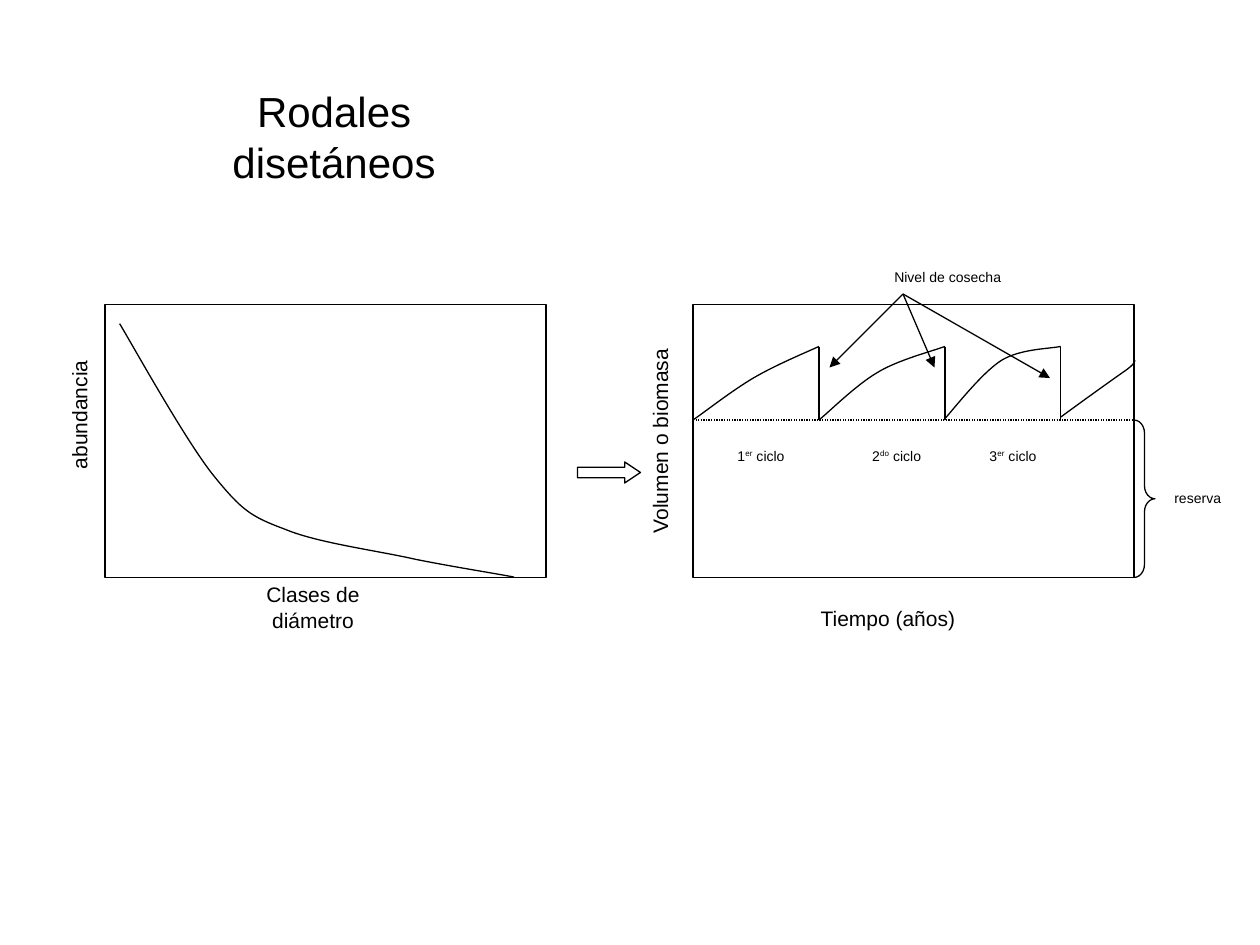
from dataclasses import dataclass

from lxml.etree import SubElement
from pptx import Presentation
from pptx.dml.color import RGBColor
from pptx.enum.dml import MSO_LINE
from pptx.enum.shapes import MSO_CONNECTOR, MSO_SHAPE as Shape
from pptx.enum.text import MSO_ANCHOR, MSO_AUTO_SIZE, PP_ALIGN
from pptx.oxml.ns import qn
from pptx.util import Pt

BLACK = RGBColor(0, 0, 0)
WHITE = RGBColor(255, 255, 255)
FONT = "Arial"
LINE_WIDTH = 0.75

# Shared levels of the two diagrams, in points
FRAME_TOP, FRAME_WIDTH, FRAME_HEIGHT = 174, 252, 156
LEFT_FRAME, RIGHT_FRAME = 60, 396
HARVEST, RESERVE = 198, 240

Point = tuple[float, float]


@dataclass(frozen=True)
class Label:
    text: str  # parts between bars are superscript
    center: Point
    width: float
    size: float = 8
    rotation: float = 0
    wrap: bool = False


@dataclass(frozen=True)
class Curve:
    points: list[Point]  # start, then two controls and an end per segment


LABELS = [
    Label("Clases de diámetro", (178.9, 347), 117.4, size=12, wrap=True),
    Label("abundancia", (45.2, 237), 69, size=12, rotation=270),
    Label("Tiempo (años)", (507.4, 353), 91.4, size=12),
    Label("Volumen o biomasa", (377, 252), 120, size=12, rotation=270),
    Label("1|er| ciclo", (434.9, 260.3), 41.8),
    Label("2|do| ciclo", (512.4, 260.3), 42.5),
    Label("3|er| ciclo", (578.9, 260.3), 41.8),
    Label("Nivel de cosecha", (541.6, 158), 75.6),
    Label("reserva", (684.5, 284.3), 41),
]

CURVES = [
    # Abundance by diameter class
    Curve([(68.4, 185), (77, 199.4), (106.6, 252.7), (122.4, 272.2),
           (138.2, 291.6), (143.3, 295.2), (162.7, 302.4),
           (181.4, 310.3), (215.3, 314.6), (237.6, 319.7),
           (259.2, 324), (282.2, 327.6), (293.8, 329.8)]),
    # Growth in each cutting cycle
    Curve([(396, RESERVE), (401.8, 236.2), (418.3, 223.2), (430.6, 216),
           (442.8, 208.8), (460.1, 201.6), (468, HARVEST)]),
    Curve([(468, RESERVE), (473.8, 235.4), (488.9, 220.3), (501.1, 213.1),
           (512.6, 205.9), (532.1, 200.9), (540, HARVEST)]),
    Curve([(539.3, RESERVE), (544.3, 234.7), (560.9, 213.1), (572.4, 205.9),
           (583.2, 199.4), (599, 199.4), (606.2, HARVEST)]),
    Curve([(606.2, 238.3), (612, 234), (635, 217.4), (642.2, 212.4),
           (649.4, 207.4), (647.3, 207.4), (648.7, 205.9)]),
]
HARVEST_TIMES = [468, 540, 606.2]
ARROW_START = (516, 168)
ARROW_ENDS = [(474, 210), (534, 210), (600, 216)]


def write_text(box, text: str, *, size: float, wrap: bool = False) -> None:
    frame = box.text_frame
    frame.word_wrap = wrap
    frame.auto_size = MSO_AUTO_SIZE.NONE
    frame.vertical_anchor = MSO_ANCHOR.MIDDLE
    para = frame.paragraphs[0]
    para.alignment = PP_ALIGN.CENTER
    for index, part in enumerate(text.split("|")):
        span = para.add_run()
        span.text = part
        span.font.name = FONT
        span.font.size = Pt(size)
        span.font.color.rgb = BLACK
        if index % 2:
            span.font._element.set("baseline", "30000")


def add_label(page, label: Label) -> None:
    height = 21.6 if label.size == 12 else 16.6
    x, y = label.center
    box = page.shapes.add_textbox(Pt(x - label.width / 2), Pt(y - height / 2),
                                  Pt(label.width), Pt(height))
    box.rotation = label.rotation
    write_text(box, label.text, size=label.size, wrap=label.wrap)


def outline(shape, fill: RGBColor | None = None) -> None:
    shape.shadow.inherit = False
    shape.line.color.rgb = BLACK
    shape.line.width = Pt(LINE_WIDTH)
    if fill is None:
        shape.fill.background()
    else:
        shape.fill.solid()
        shape.fill.fore_color.rgb = fill


def add_preset(page, kind: Shape, left: float, top: float, width: float,
               height: float, fill: RGBColor | None = None):
    shape = page.shapes.add_shape(kind, Pt(left), Pt(top), Pt(width), Pt(height))
    outline(shape, fill)
    return shape


def add_curve(page, curve: Curve) -> None:
    start, *others = [(Pt(x), Pt(y)) for x, y in curve.points]
    builder = page.shapes.build_freeform(*start)
    builder.add_line_segments(others, close=False)
    shape = builder.convert_to_shape()
    outline(shape)
    # Turn every three straight segments into one Bézier segment
    segments = list(shape._element.iter(qn("a:lnTo")))
    for first in range(0, len(segments), 3):
        bezier = SubElement(segments[first].getparent(), qn("a:cubicBezTo"))
        for segment in segments[first:first + 3]:
            bezier.append(segment[0])
            segment.getparent().remove(segment)


def add_line(page, start: Point, end: Point, *, dotted: bool = False,
             arrow: bool = False) -> None:
    line = page.shapes.add_connector(MSO_CONNECTOR.STRAIGHT,
                                     *map(Pt, start + end))
    line.line.color.rgb = BLACK
    line.line.width = Pt(LINE_WIDTH)
    if dotted:
        line.line.dash_style = MSO_LINE.ROUND_DOT
    if arrow:
        SubElement(line.line._get_or_add_ln(), qn("a:tailEnd"), type="triangle")
    SubElement(line._element.spPr, qn("a:effectLst"))


def main() -> None:
    deck = Presentation()
    deck.slide_width, deck.slide_height = Pt(720), Pt(540)
    page = deck.slides.add_slide(deck.slide_layouts[5])

    # Title
    title = page.shapes.title
    title.left, title.top, title.width, title.height = map(
        Pt, (102, 45.4, 177.8, 64.8))
    write_text(title, "Rodales disetáneos", size=24, wrap=True)

    # Frames and curves
    for left in (RIGHT_FRAME, LEFT_FRAME):
        add_preset(page, Shape.RECTANGLE, left, FRAME_TOP, FRAME_WIDTH,
                   FRAME_HEIGHT, WHITE)
    for curve in CURVES:
        add_curve(page, curve)

    # Reserve level, harvests and the arrows to them
    right = RIGHT_FRAME + FRAME_WIDTH
    add_line(page, (RIGHT_FRAME, RESERVE), (right, RESERVE), dotted=True)
    for time in HARVEST_TIMES:
        add_line(page, (time, HARVEST), (time, RESERVE))
    for end in ARROW_ENDS:
        add_line(page, ARROW_START, end, arrow=True)

    # Arrow between the diagrams and brace of the reserve
    arrow = add_preset(page, Shape.RIGHT_ARROW, 330, 264, 36, 12)
    arrow.adjustments[1] = 0.75
    brace = add_preset(page, Shape.RIGHT_BRACE, right, RESERVE, 12,
                       FRAME_TOP + FRAME_HEIGHT - RESERVE)
    brace.adjustments[0] = 0.625

    for label in LABELS:
        add_label(page, label)
    deck.save("out.pptx")


if __name__ == "__main__":
    main()
